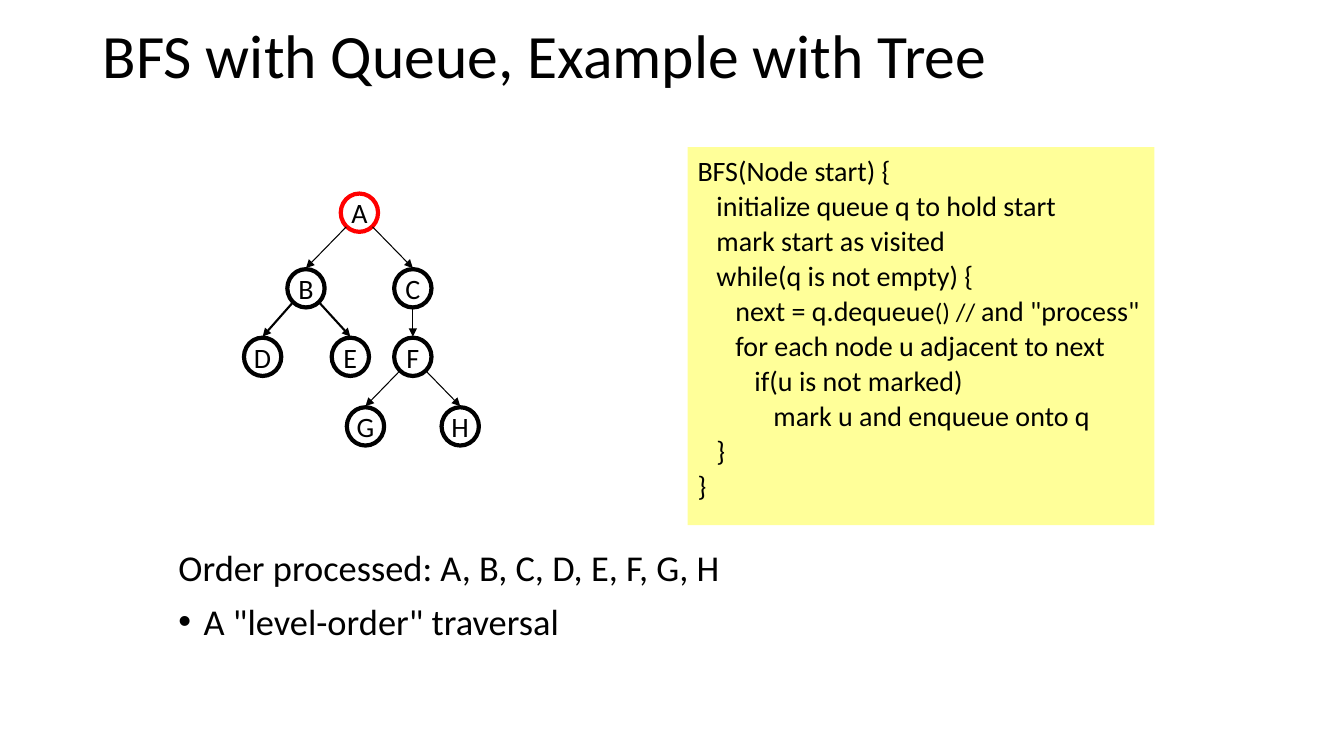
from dataclasses import dataclass

from lxml import etree
from pptx import Presentation
from pptx.dml.color import RGBColor
from pptx.enum.shapes import MSO_CONNECTOR, MSO_SHAPE
from pptx.enum.text import MSO_ANCHOR, MSO_AUTO_SIZE, PP_ALIGN
from pptx.oxml.ns import qn
from pptx.util import Inches, Pt

ELLIPSE = MSO_SHAPE.OVAL
RECTANGLE = MSO_SHAPE.RECTANGLE
STRAIGHT = MSO_CONNECTOR.STRAIGHT
LEFT, CENTER = PP_ALIGN.LEFT, PP_ALIGN.CENTER
TOP, MIDDLE = MSO_ANCHOR.TOP, MSO_ANCHOR.MIDDLE
NO_AUTOFIT = MSO_AUTO_SIZE.NONE


@dataclass(frozen=True)
class Theme:
    font: str = "Calibri"
    ink: RGBColor = RGBColor(0, 0, 0)
    start: RGBColor = RGBColor(0xFF, 0, 0)
    code_fill: RGBColor = RGBColor(0xFF, 0xFF, 0x99)
    title_size: int = 44
    body_size: int = 26
    text_size: int = 20
    small_size: int = 18
    node_line: float = 3


@dataclass(frozen=True)
class Node:
    label: str
    left: float
    level: int
    color: RGBColor

    @property
    def center(self) -> float:
        return self.left + NODE_WIDTH / 2

    @property
    def top(self) -> float:
        return LEVEL_TOPS[self.level]


@dataclass(frozen=True)
class Edge:
    parent: str
    child: str
    width: float = 0.75


THEME = Theme()
NODE_WIDTH, NODE_HEIGHT = 0.37, 0.38
LEVEL_TOPS = (1.92, 2.67, 3.35, 4.04)
RIM_ACROSS, RIM_DOWN = 0.13, 0.33
ARROW_GAP = 0.01

NODES = [
    Node("A", 3.38, 0, THEME.start),
    Node("B", 2.85, 1, THEME.ink),
    Node("C", 3.91, 1, THEME.ink),
    Node("D", 2.42, 2, THEME.ink),
    Node("E", 3.29, 2, THEME.ink),
    Node("F", 3.91, 2, THEME.ink),
    Node("G", 3.44, 3, THEME.ink),
    Node("H", 4.38, 3, THEME.ink),
]
EDGES = [
    Edge("A", "B"),
    Edge("A", "C"),
    Edge("B", "D", 1.5),
    Edge("B", "E", 1.5),
    Edge("C", "F"),
    Edge("F", "G"),
    Edge("F", "H"),
]
CODE = [
    [("BFS(Node start) {", THEME.text_size)],
    [("   initialize queue q to hold start", THEME.text_size)],
    [("   mark start as visited", THEME.text_size)],
    [("   while(q is not empty) {", THEME.text_size)],
    [
        ("      next = q.dequeue", THEME.text_size),
        ("() // ", THEME.small_size),
        ('and "process"', THEME.text_size),
    ],
    [("      for each node u adjacent to next", THEME.text_size)],
    [("         if(u is not marked)", THEME.text_size)],
    [("            mark u and enqueue onto q", THEME.text_size)],
    [("   }", THEME.text_size)],
    [("}", THEME.text_size)],
]


def add_run(paragraph, text: str, size: float) -> None:
    run = paragraph.add_run()
    run.text = text
    run.font.name = THEME.font
    run.font.size = Pt(size)
    run.font.color.rgb = THEME.ink


def next_paragraph(frame, index: int):
    return frame.add_paragraph() if index else frame.paragraphs[0]


def place(shape, left: float, top: float, width: float, height: float) -> None:
    shape.left, shape.top = Inches(left), Inches(top)
    shape.width, shape.height = Inches(width), Inches(height)
    shape.text_frame.auto_size = NO_AUTOFIT


def set_bullet(paragraph, bullet: str) -> None:
    properties = paragraph._p.get_or_add_pPr()
    indent = Inches(0.25) if bullet else 0
    properties.set("marL", str(indent))
    properties.set("indent", str(-indent))
    if bullet:
        etree.SubElement(properties, qn("a:buChar")).set("char", bullet)
    else:
        etree.SubElement(properties, qn("a:buNone"))


def fill_title(title) -> None:
    place(title, 0.92, 0.18, 11.5, 0.81)
    title.text_frame.vertical_anchor = MIDDLE
    paragraph = title.text_frame.paragraphs[0]
    paragraph.alignment = LEFT
    paragraph.line_spacing = 0.9
    add_run(paragraph, "BFS with Queue, Example with Tree", THEME.title_size)


def fill_body(body) -> None:
    place(body, 1.67, 5.41, 9.25, 1.63)
    lines = [("Order processed: A, B, C, D, E, F, G, H", ""), ('A "level-order" traversal', "•")]
    for index, (text, bullet) in enumerate(lines):
        paragraph = next_paragraph(body.text_frame, index)
        set_bullet(paragraph, bullet)
        paragraph.line_spacing = 0.9
        paragraph.space_before = Pt(10 if index else 0)
        add_run(paragraph, text, THEME.body_size)


def draw_node(tree, node: Node) -> None:
    circle = tree.shapes.add_shape(
        ELLIPSE, Inches(node.left), Inches(node.top), Inches(NODE_WIDTH), Inches(NODE_HEIGHT)
    )
    circle.shadow.inherit = False
    circle.fill.background()
    circle.line.color.rgb = node.color
    circle.line.width = Pt(THEME.node_line)
    frame = circle.text_frame
    frame.word_wrap = False
    frame.vertical_anchor = MIDDLE
    frame.paragraphs[0].alignment = CENTER
    add_run(frame.paragraphs[0], node.label, THEME.text_size)


def draw_edge(tree, parent: Node, child: Node, width: float) -> None:
    side = (child.center > parent.center) - (child.center < parent.center)
    start_x = parent.center + side * RIM_ACROSS
    start_y = parent.top + (RIM_DOWN if side else NODE_HEIGHT)
    arrow = tree.shapes.add_connector(
        STRAIGHT, Inches(start_x), Inches(start_y),
        Inches(child.center), Inches(child.top - ARROW_GAP),
    )
    arrow.line.color.rgb = THEME.ink
    arrow.line.width = Pt(width)
    etree.SubElement(arrow.line._get_or_add_ln(), qn("a:tailEnd")).set("type", "triangle")
    etree.SubElement(arrow._element.spPr, qn("a:effectLst"))


def draw_code(slide) -> None:
    box = slide.shapes.add_shape(RECTANGLE, Inches(6.82), Inches(1.46), Inches(4.63), Inches(3.75))
    box.shadow.inherit = False
    box.fill.solid()
    box.fill.fore_color.rgb = THEME.code_fill
    box.line.fill.background()
    frame = box.text_frame
    frame.word_wrap = False
    frame.vertical_anchor = TOP
    frame.margin_left = frame.margin_right = Inches(0.1)
    frame.margin_top = frame.margin_bottom = Inches(0.1)
    for index, runs in enumerate(CODE):
        paragraph = next_paragraph(frame, index)
        paragraph.alignment = LEFT
        paragraph.line_spacing = Pt(21)
        paragraph.space_before = Pt(4 if index else 0)
        for text, size in runs:
            add_run(paragraph, text, size)


def main() -> None:
    presentation = Presentation()
    presentation.slide_width, presentation.slide_height = Inches(13.33), Inches(7.5)
    slide = presentation.slides.add_slide(presentation.slide_layouts[1])
    fill_title(slide.shapes.title)
    fill_body(slide.placeholders[1])
    tree = slide.shapes.add_group_shape()
    nodes = {node.label: node for node in NODES}
    for node in NODES:
        draw_node(tree, node)
    for edge in EDGES:
        draw_edge(tree, nodes[edge.parent], nodes[edge.child], edge.width)
    draw_code(slide)
    presentation.save("out.pptx")


if __name__ == "__main__":
    main()
